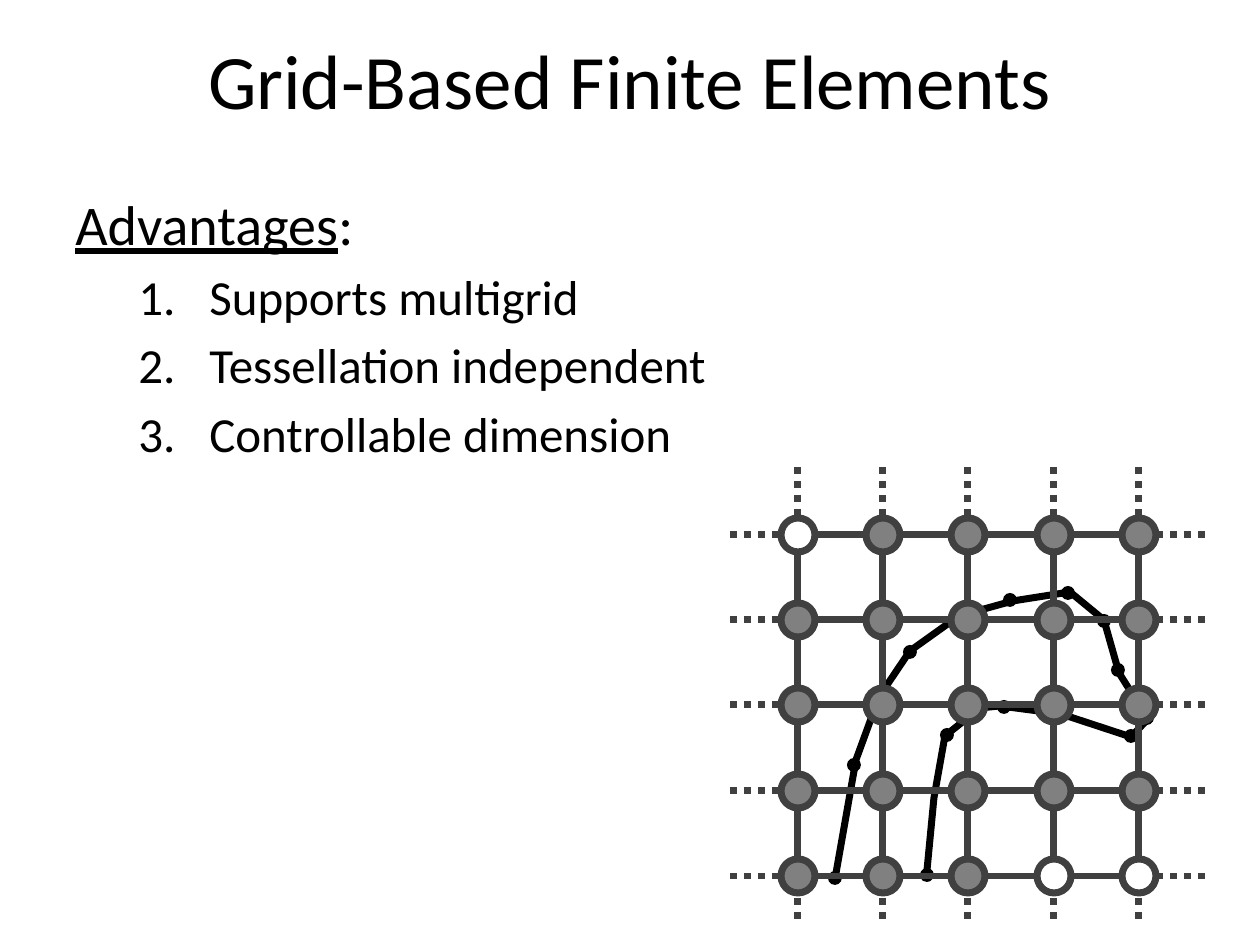
from dataclasses import dataclass
from itertools import product

from lxml.etree import SubElement
from pptx import Presentation
from pptx.dml.color import RGBColor as RGB
from pptx.enum.dml import MSO_LINE
from pptx.enum.shapes import MSO_CONNECTOR, MSO_SHAPE
from pptx.enum.text import MSO_ANCHOR as ANCHOR, PP_ALIGN as ALIGN
from pptx.oxml import parse_xml
from pptx.oxml.ns import nsdecls, qn
from pptx.util import Pt

PX = 914400 / 126  # EMU per px


@dataclass(frozen=True)
class Theme:
    font: str = "Calibri"
    ink: RGB = RGB(0x00, 0x00, 0x00)
    grid: RGB = RGB(0x40, 0x40, 0x40)
    active: RGB = RGB(0x80, 0x80, 0x80)
    inactive: RGB = RGB(0xFF, 0xFF, 0xFF)
    title: int = 44
    heading: int = 32
    item: int = 28
    stroke: int = 4


def emu(*lengths):
    return [round(v * PX) for v in lengths]


class Deck:
    """Draws on the current slide, or in its latest group."""

    def __init__(self, theme):
        self.theme = theme
        self.prs = Presentation()
        self.prs.slide_width, self.prs.slide_height = emu(1260, 945)

    def add_slide(self):
        self.slide = self.prs.slides.add_slide(self.prs.slide_layouts[6])
        self.shapes = self.slide.shapes

    def start_group(self):
        self.shapes = self.slide.shapes.add_group_shape().shapes

    def text_box(self, x, y, w, h, anchor=ANCHOR.TOP):
        tf = self.slide.shapes.add_textbox(*emu(x, y, w, h)).text_frame
        tf.word_wrap = True
        tf.vertical_anchor = anchor
        return tf

    def add_text(self, p, size, *texts):
        p.font.name, p.font.size = self.theme.font, Pt(size)
        p.font.color.rgb = self.theme.ink
        for text in texts:
            p.add_run().text = text

    def space_before(self, p, percent):
        pPr = p._p.get_or_add_pPr()
        pPr.insert(0, parse_xml(
            f'<a:spcBef {nsdecls("a")}><a:spcPct val="{percent * 1000}"/></a:spcBef>'))

    def number(self, p, left, hang):
        pPr = p._p.get_or_add_pPr()
        margin, indent = emu(left, -hang)
        pPr.set("marL", str(margin))
        pPr.set("indent", str(indent))
        pPr.insert(1, parse_xml(
            f'<a:buAutoNum {nsdecls("a")} type="arabicPeriod"/>'))

    def stroke(self, line, color):
        line.color.rgb, line.width = color, Pt(self.theme.stroke)

    def circle(self, x, y, diameter, fill, line=None):
        """Draw a circle centred on x, y."""
        r = diameter / 2
        sp = self.shapes.add_shape(
            MSO_SHAPE.OVAL, *emu(x - r, y - r, diameter, diameter))
        sp.shadow.inherit = False
        sp.fill.solid()
        sp.fill.fore_color.rgb = fill
        if line is None:
            sp.line.fill.background()
        else:
            self.stroke(sp.line, line)

    def line(self, x1, y1, x2, y2, dotted=False):
        cx = self.shapes.add_connector(
            MSO_CONNECTOR.STRAIGHT, *emu(x1, y1, x2, y2))
        self.stroke(cx.line, self.theme.grid)
        if dotted:
            cx.line.dash_style = MSO_LINE.ROUND_DOT
        SubElement(cx._element.spPr, qn("a:effectLst"))

    def polyline(self, points):
        fb = self.shapes.build_freeform(*points[0], scale=PX)
        fb.add_line_segments(points[1:], close=False)
        sp = fb.convert_to_shape()
        sp.shadow.inherit = False
        sp.fill.background()
        self.stroke(sp.line, self.theme.ink)


ITEMS = ["Supports multigrid", "Tessellation independent", "Controllable dimension"]
CURVE = [(835, 879), (856, 760), (879, 697), (910, 651), (959, 616), (1013, 601),
         (1070, 592), (1104, 620), (1119, 673), (1148, 719), (1131, 737),
         (1061, 714), (1000, 706), (980, 708), (945, 736), (934, 798), (926, 881)]
SAMPLES = [(835, 878), (854, 765), (879, 700), (910, 652), (958, 618), (1010, 600),
           (1068, 593), (1104, 621), (1118, 670), (1147, 718), (1131, 736),
           (1060, 715), (1004, 707), (980, 710), (947, 735), (927, 875)]
SAMPLE_SIZE = 14
COUNT, SPAN = 5, 341
XS, YS = ([start + round(i * SPAN / (COUNT - 1)) for i in range(COUNT)]
          for start in (798, 535))
NODE, RADIUS, STUB = 34, 17, 51
BOTTOM_GAP, BOTTOM_STUB = 22, 25
INACTIVE = {(0, 0), (3, 4), (4, 4)}  # column, row


def add_texts(deck):
    t = deck.theme
    p = deck.text_box(63, 0, 1134, 158, ANCHOR.MIDDLE).paragraphs[0]
    p.alignment = ALIGN.CENTER
    deck.add_text(p, t.title, "Grid-Based Finite Elements")

    tf = deck.text_box(63, 183, 1134, 624)
    p = tf.paragraphs[0]
    deck.add_text(p, t.heading, "Advantages", ":")
    p.runs[0].font.underline = True
    deck.space_before(p, 20)
    for item in ITEMS:
        p = tf.add_paragraph()
        p.level = 1
        deck.add_text(p, t.item, item)
        deck.space_before(p, 20)
        deck.number(p, left=134, hang=71)


def add_curve(deck):
    deck.start_group()
    deck.polyline(CURVE)
    for x, y in SAMPLES:
        deck.circle(x, y, SAMPLE_SIZE, deck.theme.ink)


def add_grid(deck):
    t = deck.theme
    deck.start_group()
    top, bottom = YS[0] - RADIUS, YS[-1] + BOTTOM_GAP
    left, right = XS[0] - RADIUS, XS[-1] + RADIUS
    for x in XS:
        deck.line(x, top - STUB, x, top, dotted=True)
        deck.line(x, bottom, x, bottom + BOTTOM_STUB, dotted=True)
        for y1, y2 in zip(YS, YS[1:]):
            deck.line(x, y1 + RADIUS, x, y2 - RADIUS)
    for y in YS:
        deck.line(left - STUB, y, left, y, dotted=True)
        deck.line(right, y, right + STUB, y, dotted=True)
        for x1, x2 in zip(XS, XS[1:]):
            deck.line(x1 + RADIUS, y, x2 - RADIUS, y)
    for col, row in product(range(COUNT), repeat=2):
        fill = t.inactive if (col, row) in INACTIVE else t.active
        deck.circle(XS[col], YS[row], NODE, fill, t.grid)


def main():
    deck = Deck(Theme())
    deck.add_slide()
    add_texts(deck)
    add_curve(deck)
    add_grid(deck)
    deck.prs.save("out.pptx")


if __name__ == "__main__":
    main()
